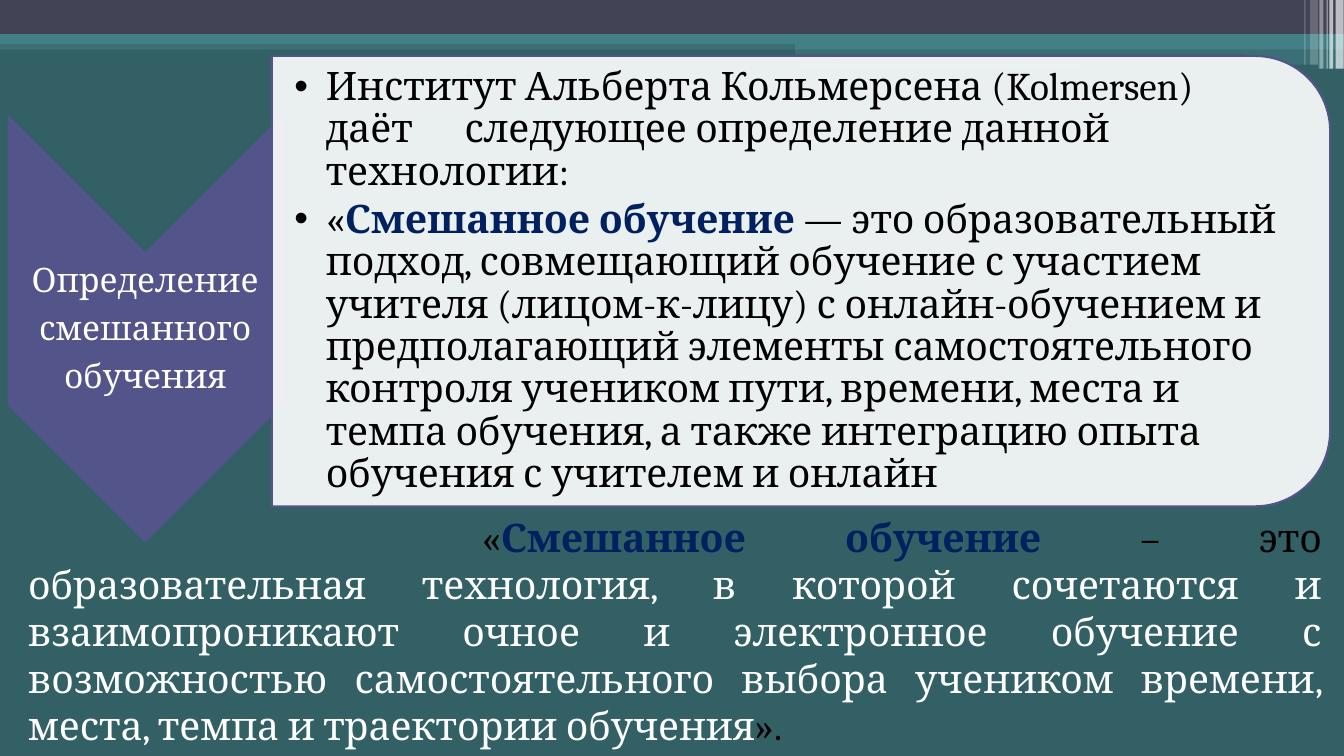
from dataclasses import dataclass

from lxml.etree import SubElement
from pptx import Presentation
from pptx.dml.color import RGBColor
from pptx.enum.shapes import MSO_SHAPE as Shape
from pptx.enum.text import MSO_ANCHOR as Anchor, MSO_AUTO_SIZE as AutoSize, PP_ALIGN as Align
from pptx.oxml.ns import qn
from pptx.util import Cm, Pt


@dataclass(frozen=True)
class Theme:
    font: str = "Cambria"
    label_size: int = 24
    text_size: int = 28
    background: str = "326065"
    dark: str = "424456"
    teal: str = "438086"
    violet: str = "53548A"
    navy: str = "002060"
    white: str = "FFFFFF"
    black: str = "000000"


theme = Theme()

# Content: paragraphs are lists of (text, colour, bold)
TERM = ("Смешанное обучение ", theme.navy, True)
LABEL = [[(word, theme.white, False)] for word in ("Определение", "смешанного", "обучения")]
DEFINITION = [
    [("Институт Альберта Кольмерсена (Kolmersen)\nдаёт\tследующее определение данной "
      "технологии:", theme.black, False)],
    [("«", theme.black, False), TERM,
     ("— это образовательный подход, совмещающий обучение с участием учителя "
      "(лицом-к-лицу) с онлайн-обучением и предполагающий элементы самостоятельного "
      "контроля учеником пути, времени, места и темпа обучения, а также интеграцию "
      "опыта обучения с учителем и онлайн", theme.black, False)],
]
SUMMARY = [
    [("«", theme.black, False), TERM, ("– это ", theme.black, False),
     ("образовательная технология, в которой сочетаются и взаимопроникают очное и "
      "электронное обучение с возможностью самостоятельного выбора учеником времени, "
      "места, темпа и траектории обучения", theme.white, False),
     ("».", theme.black, False)],
]

# Geometry in centimetres: left, top, width, height
WIDTH, HEIGHT = 33.87, 19.05
BANDS = [  # box, preset, colour, opacity
    ((0, 1.02, WIDTH, 0.23), Shape.RECTANGLE, theme.teal, 50),
    ((0, 0, WIDTH, 0.86), Shape.RECTANGLE, theme.dark, 100),
    ((0, 0.86, WIDTH, 0.25), Shape.RECTANGLE, theme.teal, 100),
    ((20.04, 0.99, 13.83, 0.25), Shape.RECTANGLE, theme.teal, 100),
    ((20.04, 1.22, 13.83, 0.51), Shape.RECTANGLE, theme.teal, 50),
    ((20.02, 1.37, 11.35, 0.08), Shape.ROUNDED_RECTANGLE, theme.background, 100),
    ((27.3, 1.63, 5.92, 0.1), Shape.ROUNDED_RECTANGLE, theme.background, 100),
]
STRIPES = [  # left, width, height, opacity
    (33.66, 0.2, 1.73, 65), (33.5, 0.1, 1.73, 65), (33.43, 0.03, 1.73, 60),
    (33.25, 0.1, 1.73, 40), (33.02, 0.2, 1.63, 20), (32.87, 0.03, 1.63, 30),
]
SUMMARY_BOX = (0.46, 12.8, 33.1, 6.25)
CHEVRON_BOX = (0.22, 2.95, 6.88, 10.69)
LABEL_BOX = (0.22, 6.42, 6.88, 3.78)
PANEL_BOX = (6.85, 1.41, 26.67, 11.35)
DEFINITION_BOX = (6.86, 1.96, 26.11, 10.26)


def add_block(slide, box, preset, colour, opacity=100, line=None, turned=False):
    left, top, width, height = box
    if turned:  # a quarter turn swaps the sides around the same centre
        left, top = left + (width - height) / 2, top + (height - width) / 2
        width, height = height, width
    shape = slide.shapes.add_shape(preset, Cm(left), Cm(top), Cm(width), Cm(height))
    shape.rotation = 90 if turned else 0
    shape.shadow.inherit = False
    shape.fill.solid()
    shape.fill.fore_color.rgb = RGBColor.from_string(colour)
    if opacity < 100:
        color = shape._element.spPr.find(qn("a:solidFill"))[0]
        SubElement(color, qn("a:alpha"), val=str(opacity * 1000))
    if line:
        shape.line.color.rgb = RGBColor.from_string(line)
        shape.line.width = Pt(1.5)
    else:
        shape.line.fill.background()


def write(shape, box, paragraphs, size, align=Align.LEFT, anchor=Anchor.MIDDLE,
          insets=(0.05, 0.05, 0.05, 0.05), spacing=1.0, after=0, margin=0, indent=0, tab=None):
    shape.left, shape.top, shape.width, shape.height = map(Cm, box)
    frame = shape.text_frame
    frame.word_wrap, frame.auto_size, frame.vertical_anchor = True, AutoSize.NONE, anchor
    (frame.margin_left, frame.margin_top,
     frame.margin_right, frame.margin_bottom) = map(Cm, insets)
    for index, runs in enumerate(paragraphs):
        paragraph = frame.add_paragraph() if index else frame.paragraphs[0]
        paragraph.alignment, paragraph.line_spacing = align, spacing
        paragraph.space_before, paragraph.space_after = Pt(0), Pt(after)
        properties = paragraph._p.get_or_add_pPr()
        properties.set("marL", str(Cm(margin)))
        properties.set("indent", str(Cm(indent)))
        if tab:
            stops = SubElement(properties, qn("a:tabLst"))
            SubElement(stops, qn("a:tab"), pos=str(Cm(tab)), algn="l")
        for text, colour, bold in runs:
            for number, part in enumerate(text.split("\n")):
                if number:
                    paragraph.add_line_break()
                run = paragraph.add_run()
                run.text = part
                run.font.name, run.font.size, run.font.bold = theme.font, Pt(size), bold
                run.font.color.rgb = RGBColor.from_string(colour)


def bring_to_front(slide, shape):
    slide.shapes._spTree.append(shape._element)


def main():
    presentation = Presentation()
    presentation.slide_width, presentation.slide_height = Cm(WIDTH), Cm(HEIGHT)
    slide = presentation.slides.add_slide(presentation.slide_layouts[1])
    slide.background.fill.solid()
    slide.background.fill.fore_color.rgb = RGBColor.from_string(theme.background)
    label, definition = slide.shapes.title, slide.placeholders[1]

    # Header bands and corner stripes
    for box, preset, colour, opacity in BANDS:
        add_block(slide, box, preset, colour, opacity)
    for left, width, height, opacity in STRIPES:
        add_block(slide, (left, 0, width, height), Shape.RECTANGLE, theme.white, opacity)

    # Summary below
    summary = slide.shapes.add_textbox(*map(Cm, SUMMARY_BOX))
    write(summary, SUMMARY_BOX, SUMMARY, theme.text_size, align=Align.JUSTIFY,
          anchor=Anchor.TOP, insets=(0.25, 0.13, 0.25, 0.13), indent=11.43)

    # Chevron with its label
    add_block(slide, CHEVRON_BOX, Shape.CHEVRON, theme.violet, line=theme.violet, turned=True)
    write(label, LABEL_BOX, LABEL, theme.label_size, align=Align.CENTER, spacing=0.9, after=8.4)
    bring_to_front(slide, label)

    # Panel with the definition
    add_block(slide, PANEL_BOX, Shape.ROUND_2_SAME_RECTANGLE, theme.white, opacity=90,
              line=theme.violet, turned=True)
    write(definition, DEFINITION_BOX, DEFINITION, theme.text_size,
          insets=(0.56, 0.05, 0.05, 0.05), spacing=0.9, after=4.2,
          margin=0.79, indent=-0.79, tab=4.29)
    bring_to_front(slide, definition)

    presentation.save("out.pptx")


if __name__ == "__main__":
    main()
